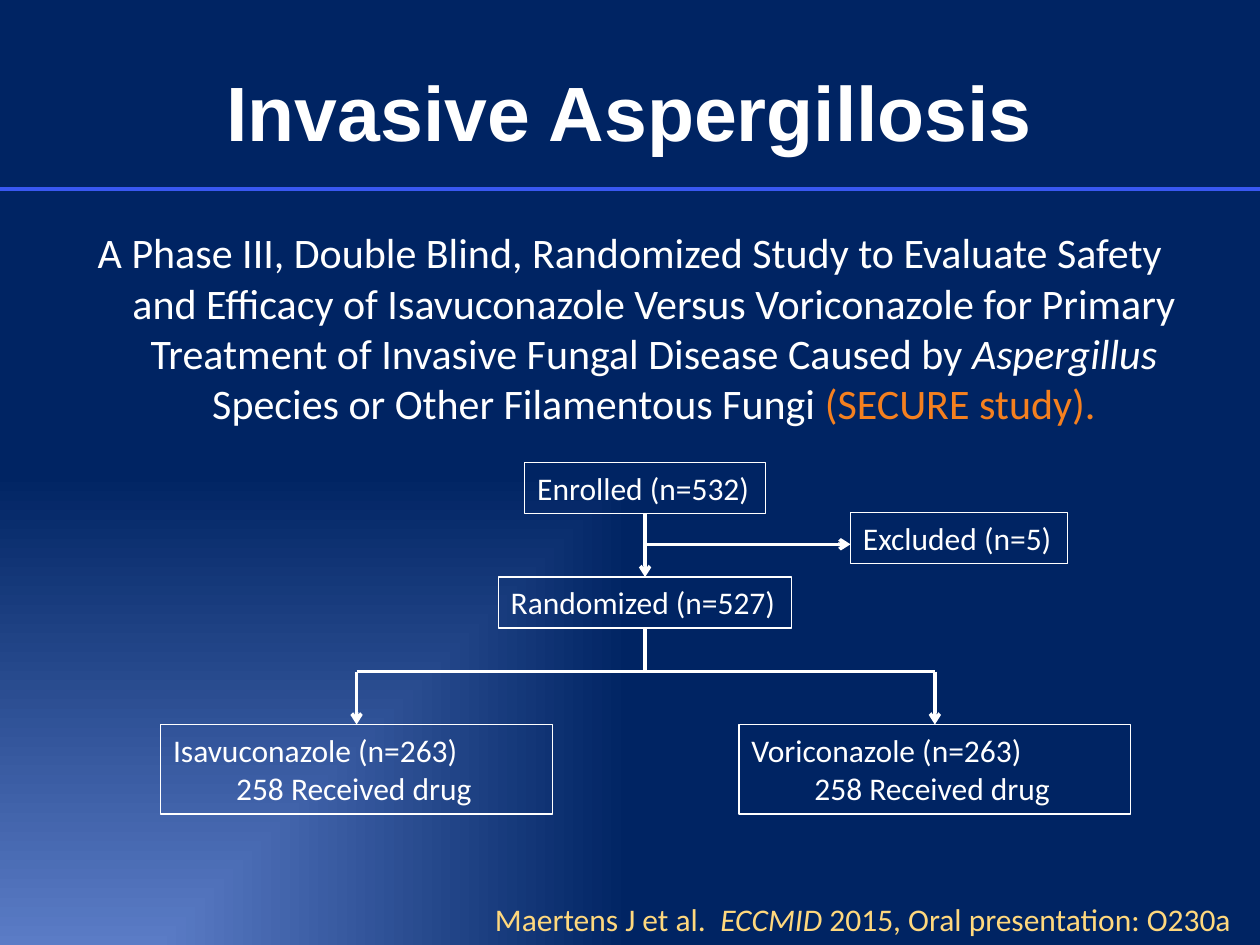
import pptx
import pptx.util
import pptx.dml.color
import pptx.enum.dml
import pptx.enum.shapes
import pptx.enum.text
import pptx.oxml
import pptx.oxml.ns

Inches, Pt = pptx.util.Inches, pptx.util.Pt
ANCHOR, ALIGN = pptx.enum.text.MSO_ANCHOR, pptx.enum.text.PP_ALIGN

THEME = {
    "white": "FFFFFF", "rule": "3958F1", "accent": "F5801F", "credit": "FFD87D",
    "glow": "5B7CC6", "navy": "002463",
    "head_font": "Arial", "font": "Calibri",
    "title": 44, "body": 24, "small": 18, "box_line": 0.75, "line": 2,
}

# Content: each paragraph is a list of (text, run format) pairs
TITLE = [[("Invasive Aspergillosis", {"bold": True})]]
STUDY = [[
    ("A Phase III, Double Blind, Randomized Study to Evaluate Safety and Efficacy "
     "of Isavuconazole Versus Voriconazole for Primary Treatment of Invasive Fungal "
     "Disease Caused by ", {}),
    ("Aspergillus", {"italic": True}),
    (" Species or Other Filamentous Fungi ", {}),
    ("(SECURE study).", {"color": "accent"}),
]]
CREDIT = [[("Maertens J et al.  ", {}), ("ECCMID", {"italic": True}),
           (" 2015, Oral presentation: O230a", {})]]

# Flow boxes: centre x, top, width, lines
BOXES = {
    "enrolled": (5.12, 3.67, 1.91, ["Enrolled (n=532)"]),
    "randomized": (5.12, 4.58, 2.33, ["Randomized (n=527)"]),
    "excluded": (7.61, 4.07, 1.72, ["Excluded (n=5)"]),
    "isavuconazole": (2.83, 5.75, 3.11, ["Isavuconazole (n=263)", "\t258 Received drug"]),
    "voriconazole": (7.42, 5.75, 3.11, ["Voriconazole (n=263)", "\t258 Received drug"]),
}
ARMS = ["isavuconazole", "voriconazole"]
BOX_PAD, LINE_HEIGHT = 0.1, 0.305
EXCLUDE_Y, BRANCH_Y = 4.32, 5.33
TOP, BOTTOM = 0, 2


def rgb(name):
    return pptx.dml.color.RGBColor.from_string(THEME[name])


def set_text(sp, paragraphs, size="small", font="font", color="white", align=ALIGN.LEFT,
             anchor=ANCHOR.TOP, wrap=True, grow=False, hang=0, before=0):
    tf = sp.text_frame
    tf.word_wrap, tf.vertical_anchor = wrap, anchor
    if grow:
        tf.auto_size = pptx.enum.text.MSO_AUTO_SIZE.SHAPE_TO_FIT_TEXT
    for i, runs in enumerate(paragraphs):
        p = tf.add_paragraph() if i else tf.paragraphs[0]
        p.alignment = align
        if before:
            p.space_before = Pt(before)
        if hang:
            pPr = p._p.get_or_add_pPr()
            pPr.set("marL", str(Inches(hang)))
            pPr.set("indent", str(-Inches(hang)))
        for text, style in runs:
            r = p.add_run()
            r.text = text
            r.font.name, r.font.size = THEME[font], Pt(THEME[size])
            r.font.bold = style.get("bold", False)
            r.font.italic = style.get("italic", False)
            r.font.color.rgb = rgb(style.get("color", color))


def add_text(s, box, paragraphs, **fmt):
    set_text(s.shapes.add_textbox(*map(Inches, box)), paragraphs, **fmt)


def add_box(s, centre, top, width, lines):
    height = BOX_PAD + LINE_HEIGHT * len(lines)
    sp = s.shapes.add_shape(pptx.enum.shapes.MSO_SHAPE.RECTANGLE, Inches(centre - width / 2),
                            Inches(top), Inches(width), Inches(height))
    sp.shadow.inherit = False
    sp.fill.background()
    sp.line.color.rgb, sp.line.width = rgb("white"), Pt(THEME["box_line"])
    set_text(sp, [[(line, {})] for line in lines], wrap=False, grow=True)
    return sp


def add_line(s, start, end, color="white", arrow=False, begin=None, finish=None):
    c = s.shapes.add_connector(pptx.enum.shapes.MSO_CONNECTOR.STRAIGHT,
                               *map(Inches, start + end))
    if begin:
        c.begin_connect(*begin)
    if finish:
        c.end_connect(*finish)
    c.line.color.rgb, c.line.width = rgb(color), Pt(THEME["line"])
    if arrow:
        tail = pptx.oxml.parse_xml(
            f'<a:tailEnd {pptx.oxml.ns.nsdecls("a")} type="arrow"/>')
        c.line._get_or_add_ln().append(tail)
    c._element.spPr.append(pptx.oxml.parse_xml(
        f'<a:effectLst {pptx.oxml.ns.nsdecls("a")}/>'))


def set_background(s):
    fill = s.background.fill
    fill.gradient()
    for stop, name in zip(fill.gradient_stops, ("glow", "navy")):
        stop.color.rgb = rgb(name)
    # Glow spreads from the bottom left corner
    lin = s._element.find(".//" + pptx.oxml.ns.qn("a:lin"))
    lin.getparent().replace(lin, pptx.oxml.parse_xml(
        f'<a:path {pptx.oxml.ns.nsdecls("a")} path="rect">'
        '<a:fillToRect l="0" t="100000" r="100000" b="0"/></a:path>'))


def main():
    prs = pptx.Presentation()
    prs.slide_width, prs.slide_height = Inches(10), Inches(7.5)
    s = prs.slides.add_slide(prs.slide_layouts[6])
    set_background(s)

    # Heading, rule and study description
    add_text(s, (0.5, 0.25, 9, 1.25), TITLE, size="title", font="head_font",
             align=ALIGN.CENTER, anchor=ANCHOR.MIDDLE)
    add_text(s, (0.5, 1.75, 9, 4.95), STUDY, size="body", align=ALIGN.CENTER,
             hang=0.38, before=4.8)
    add_line(s, (0, 1.5), (10, 1.5), color="rule")

    # Flow chart boxes
    boxes = {name: add_box(s, *spec_row) for name, spec_row in BOXES.items()}
    trunk = BOXES["enrolled"][0]
    excluded_x, _, excluded_w, _ = BOXES["excluded"]

    # Enrolment and exclusion arrows
    add_line(s, (trunk, 4.07), (trunk, 4.58), arrow=True,
             begin=(boxes["enrolled"], BOTTOM), finish=(boxes["randomized"], TOP))
    add_line(s, (trunk, EXCLUDE_Y), (excluded_x - excluded_w / 2, EXCLUDE_Y), arrow=True)

    # Branch to the two treatment arms
    add_line(s, (trunk, 4.98), (trunk, BRANCH_Y), begin=(boxes["randomized"], BOTTOM))
    left, right = (BOXES[arm][0] for arm in ARMS)
    add_line(s, (left, BRANCH_Y), (right, BRANCH_Y))
    for arm in ARMS:
        x, top = BOXES[arm][:2]
        add_line(s, (x, BRANCH_Y), (x, top), arrow=True, finish=(boxes[arm], TOP))

    # Reference
    add_text(s, (3.83, 7.09, 7, 0.4), CREDIT, color="credit", grow=True)
    prs.save("out.pptx")


if __name__ == "__main__":
    main()
